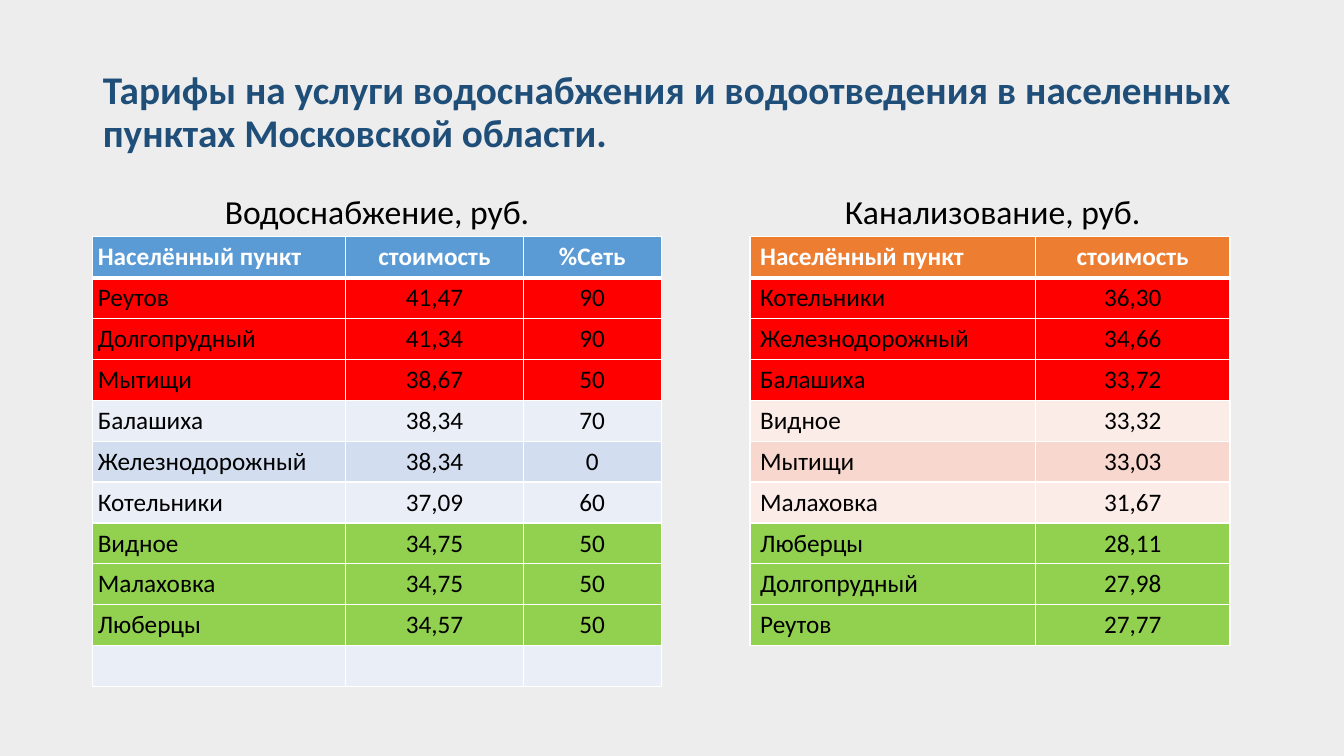
from dataclasses import dataclass

from lxml import etree
from pptx import Presentation
from pptx.dml.color import RGBColor
from pptx.enum.text import MSO_ANCHOR, MSO_AUTO_SIZE, PP_ALIGN
from pptx.oxml.ns import qn
from pptx.util import Inches, Pt

LEFT, CENTER = PP_ALIGN.LEFT, PP_ALIGN.CENTER
MIDDLE, BOTTOM = MSO_ANCHOR.MIDDLE, MSO_ANCHOR.BOTTOM
NO_AUTOFIT = MSO_AUTO_SIZE.NONE

FONT = "Calibri"
COMPARISON_LAYOUT = 4
SLIDE_WIDTH, SLIDE_HEIGHT = Inches(13.33), Inches(7.5)
HEADING_TOP, HEADING_HEIGHT = 24.53, 6.8
TABLE_TOP, ROW_HEIGHT = 31.33, 5.41
EXPENSIVE_ROWS, CHEAP_ROWS = range(1, 4), range(7, 10)

COLORS = {
    "background": "EDEDED",
    "title": "1F4E79",
    "text": "000000",
    "white": "FFFFFF",
    "expensive": "FF0000",
    "cheap": "92D050",
    "blue": "5B9BD5",
    "blue_light": "EAEFF7",
    "blue_band": "D2DEEF",
    "orange": "ED7D31",
    "orange_light": "FCECE8",
    "orange_band": "F8D7CE",
}


@dataclass
class Area:
    left: float
    top: float
    width: float
    height: float


@dataclass
class Tariff:
    heading: str
    heading_slot: int
    heading_area: Area
    heading_indent: float
    left: float
    columns: list[float]
    cell_margin: float
    theme: str
    rows: list[list[str]]


TARIFFS = [
    Tariff(
        "Водоснабжение, руб.", 1, Area(6.9, HEADING_TOP, 42.31, HEADING_HEIGHT), 0.1,
        6.9, [18.83, 13.2, 10.28], 0.05, "blue",
        [
            ["Населённый пункт", "стоимость", "%Сеть"],
            ["Реутов", "41,47", "90"],
            ["Долгопрудный", "41,34", "90"],
            ["Мытищи", "38,67", "50"],
            ["Балашиха", "38,34", "70"],
            ["Железнодорожный", "38,34", "0"],
            ["Котельники", "37,09", "60"],
            ["Видное", "34,75", "50"],
            ["Малаховка", "34,75", "50"],
            ["Люберцы", "34,57", "50"],
            ["", "", ""],
        ],
    ),
    Tariff(
        "Канализование, руб.", 3, Area(50.64, HEADING_TOP, 42.53, HEADING_HEIGHT), 0.62,
        55.81, [21.23, 14.48], 0.1, "orange",
        [
            ["Населённый пункт", "стоимость"],
            ["Котельники", "36,30"],
            ["Железнодорожный", "34,66"],
            ["Балашиха", "33,72"],
            ["Видное", "33,32"],
            ["Мытищи", "33,03"],
            ["Малаховка", "31,67"],
            ["Люберцы", "28,11"],
            ["Долгопрудный", "27,98"],
            ["Реутов", "27,77"],
        ],
    ),
]


def across(percent: float) -> int:
    return round(SLIDE_WIDTH * percent / 100)


def down(percent: float) -> int:
    return round(SLIDE_HEIGHT * percent / 100)


def color(name: str) -> RGBColor:
    return RGBColor.from_string(COLORS[name])


def write(frame, text: str, *, size: float, ink: str = "text", bold: bool = False,
          align=LEFT, spacing: float = 1.0) -> None:
    para = frame.paragraphs[0]
    para.alignment = align
    para.line_spacing = spacing
    para.space_before = Pt(0)
    para.font.size = Pt(size)
    if text:
        span = para.add_run()
        span.text = text
        span.font.name = FONT
        span.font.size = Pt(size)
        span.font.bold = bold
        span.font.color.rgb = color(ink)


def place(box, area: Area, anchor) -> None:
    box.left, box.top = across(area.left), down(area.top)
    box.width, box.height = across(area.width), down(area.height)
    box.text_frame.word_wrap = True
    box.text_frame.auto_size = NO_AUTOFIT
    box.text_frame.vertical_anchor = anchor


def add_border(cell, side: str, points: float) -> None:
    properties = cell._tc.get_or_add_tcPr()
    line = etree.SubElement(properties, qn(f"a:{side}"), w=str(Pt(points)))
    fill = etree.SubElement(line, qn("a:solidFill"))
    etree.SubElement(fill, qn("a:srgbClr"), val=COLORS["white"])


def row_color(theme: str, row: int) -> str:
    if row == 0:
        return theme
    if row in EXPENSIVE_ROWS:
        return "expensive"
    if row in CHEAP_ROWS:
        return "cheap"
    return f"{theme}_band" if row % 2 else f"{theme}_light"


def draw_cell(cell, text: str, tariff: Tariff, row: int, column: int) -> None:
    header = row == 0
    for side, points in (("lnL", 1), ("lnR", 1), ("lnT", 3 if row == 1 else 1),
                         ("lnB", 3 if header else 1)):
        add_border(cell, side, points)
    cell.fill.solid()
    cell.fill.fore_color.rgb = color(row_color(tariff.theme, row))
    cell.margin_left = cell.margin_right = Inches(tariff.cell_margin)
    cell.margin_top = cell.margin_bottom = Inches(0.05)
    write(cell.text_frame, text, size=18, ink="white" if header else "text",
          bold=header, align=CENTER if column else LEFT)


def draw_tariff(page, tariff: Tariff) -> None:
    heading = page.placeholders[tariff.heading_slot]
    place(heading, tariff.heading_area, BOTTOM)
    heading.text_frame.margin_left = Inches(tariff.heading_indent)
    write(heading.text_frame, tariff.heading, size=24, align=CENTER, spacing=0.9)

    count = len(tariff.rows)
    table = page.shapes.add_table(
        count, len(tariff.columns), across(tariff.left), down(TABLE_TOP),
        across(sum(tariff.columns)), down(ROW_HEIGHT * count)).table
    table.horz_banding = False
    for column, width in enumerate(tariff.columns):
        table.columns[column].width = across(width)
    for row, texts in enumerate(tariff.rows):
        for column, text in enumerate(texts):
            draw_cell(table.cell(row, column), text, tariff, row, column)


def main() -> None:
    deck = Presentation()
    deck.slide_width, deck.slide_height = SLIDE_WIDTH, SLIDE_HEIGHT
    page = deck.slides.add_slide(deck.slide_layouts[COMPARISON_LAYOUT])
    page.background.fill.solid()
    page.background.fill.fore_color.rgb = color("background")

    title = page.shapes.title
    place(title, Area(6.9, 5.33, 86.27, 19.33), MIDDLE)
    write(title.text_frame,
          "Тарифы на услуги водоснабжения и водоотведения в населенных "
          "пунктах Московской области.",
          size=28, ink="title", bold=True, spacing=0.9)
    for tariff in TARIFFS:
        draw_tariff(page, tariff)
    for box in list(page.placeholders):
        if not box.text_frame.text:
            box.element.getparent().remove(box.element)
    deck.save("out.pptx")


if __name__ == "__main__":
    main()
